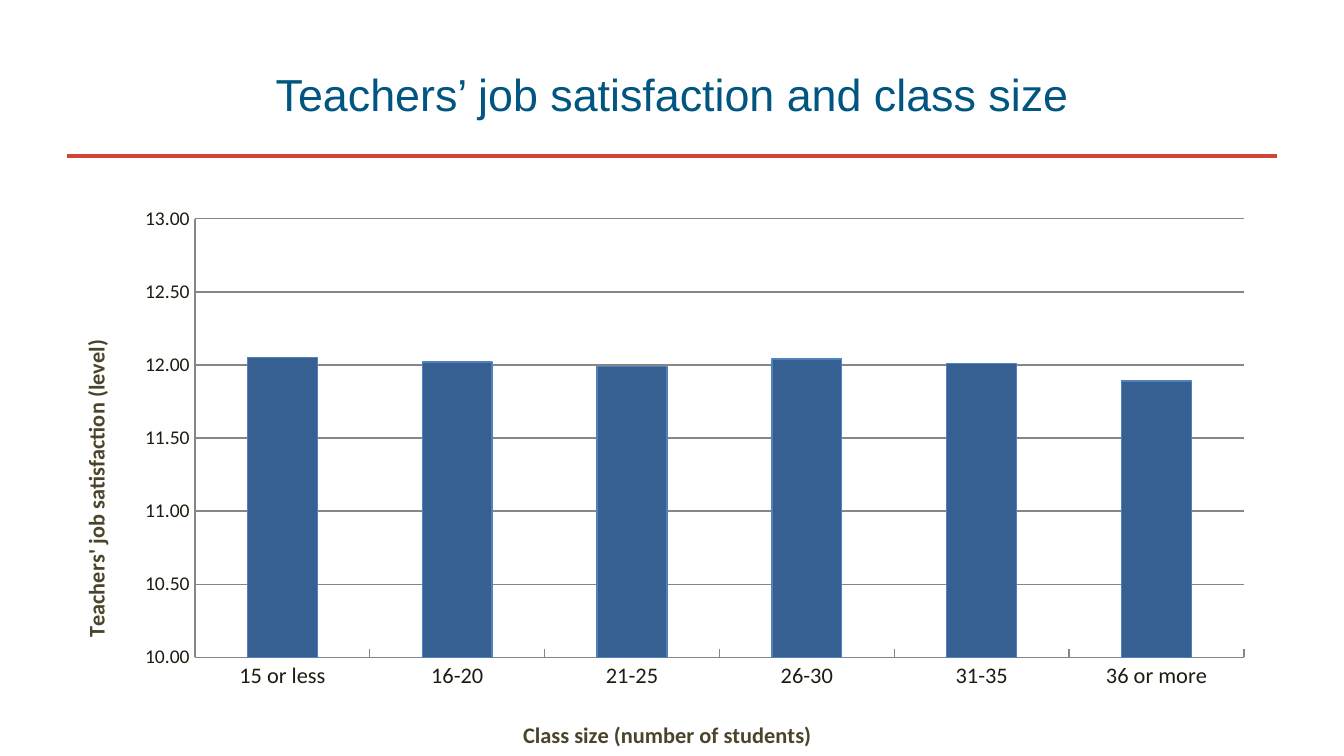
"""Build a slide charting teachers' job satisfaction against class size."""
from dataclasses import dataclass

from lxml import etree
from pptx import Presentation
from pptx.chart.data import CategoryChartData
from pptx.dml.color import RGBColor
from pptx.enum.chart import XL_CHART_TYPE, XL_TICK_MARK
from pptx.enum.shapes import MSO_CONNECTOR
from pptx.enum.text import MSO_ANCHOR, PP_ALIGN
from pptx.oxml.ns import qn
from pptx.util import Pt

COLUMN = XL_CHART_TYPE.COLUMN_CLUSTERED
TICK_INSIDE = XL_TICK_MARK.INSIDE
STRAIGHT = MSO_CONNECTOR.STRAIGHT
MIDDLE = MSO_ANCHOR.MIDDLE
CENTER = PP_ALIGN.CENTER

HEADING = "Teachers’ job satisfaction and class size"
CATEGORY_TITLE = "Class size (number of students)"
VALUE_TITLE = "Teachers' job satisfaction (level)"
SATISFACTION = [
    ("15 or less", 12.05),
    ("16-20", 12.02),
    ("21-25", 11.99),
    ("26-30", 12.04),
    ("31-35", 12.01),
    ("36 or more", 11.89),
]

EMU_PER_PX = 914400 / 134.4
SLIDE_WIDTH, SLIDE_HEIGHT = 1344, 756
MARGIN = 67
CONTENT_WIDTH = SLIDE_WIDTH - 2 * MARGIN
HEADING_TOP, HEADING_HEIGHT = 31, 126
RULE_TOP = 156
CHART_TOP = 207
CHART_HEIGHT = SLIDE_HEIGHT - CHART_TOP
PLOT = (195, 216, 1049, 442)
CATEGORY_TITLE_AT = (519, 717)
VALUE_TITLE_AT = (77, 336)


@dataclass(frozen=True)
class Theme:
    heading_font: str = "Arial"
    chart_font: str = "Calibri"
    heading: str = "005681"
    rule: str = "D04432"
    column: str = "376092"
    column_edge: str = "4F81BD"
    axis_title: str = "4A452A"
    axis_label: str = "1E1C11"
    grid: str = "868686"
    chart_text: str = "000000"
    heading_size: float = 24
    axis_title_size: float = 12
    category_size: float = 12
    value_size: float = 10.5
    chart_size: float = 10


THEME = Theme()


def px(length):
    return round(length * EMU_PER_PX)


def style_font(font, name, size, color, bold=False):
    font.name, font.size, font.bold = name, Pt(size), bold
    font.color.rgb = RGBColor.from_string(color)


def style_line(line, color, width):
    line.color.rgb = RGBColor.from_string(color)
    line.width = Pt(width)


def add_heading(slide):
    box = slide.shapes.add_textbox(
        px(MARGIN), px(HEADING_TOP), px(CONTENT_WIDTH), px(HEADING_HEIGHT))
    frame = box.text_frame
    frame.word_wrap, frame.vertical_anchor = True, MIDDLE
    para = frame.paragraphs[0]
    para.alignment = CENTER
    span = para.add_run()
    span.text = HEADING
    style_font(span.font, THEME.heading_font, THEME.heading_size, THEME.heading)


def add_rule(slide):
    rule = slide.shapes.add_connector(
        STRAIGHT, px(MARGIN), px(RULE_TOP), px(MARGIN + CONTENT_WIDTH), px(RULE_TOP))
    style_line(rule.line, THEME.rule, 2)
    etree.SubElement(rule._element.spPr, qn("a:effectLst"))


def set_layout(parent, index, left, top, width=None, height=None):
    for old in parent.findall(qn("c:layout")):
        parent.remove(old)
    layout = etree.Element(qn("c:layout"))
    manual = etree.SubElement(layout, qn("c:manualLayout"))
    settings = [("xMode", "edge"), ("yMode", "edge"),
                ("x", (left - MARGIN) / CONTENT_WIDTH),
                ("y", (top - CHART_TOP) / CHART_HEIGHT)]
    if width:
        settings = [("layoutTarget", "inner"), *settings,
                    ("w", width / CONTENT_WIDTH), ("h", height / CHART_HEIGHT)]
    for tag, value in settings:
        etree.SubElement(manual, qn(f"c:{tag}")).set("val", str(value))
    parent.insert(index, layout)


def style_axis(axis, title, position, label_size):
    span = axis.axis_title.text_frame.paragraphs[0].add_run()
    span.text = title
    style_font(span.font, THEME.chart_font, THEME.axis_title_size, THEME.axis_title, True)
    set_layout(axis.axis_title._element, 1, *position)
    style_font(axis.tick_labels.font, THEME.chart_font, label_size, THEME.axis_label)
    axis.major_tick_mark = TICK_INSIDE
    style_line(axis.format.line, THEME.grid, 0.75)


def add_satisfaction_chart(slide):
    categories, levels = zip(*SATISFACTION)
    data = CategoryChartData(number_format="0.00")
    data.categories = categories
    data.add_series("Series 1", levels)
    chart = slide.shapes.add_chart(
        COLUMN, px(MARGIN), px(CHART_TOP), px(CONTENT_WIDTH), px(CHART_HEIGHT), data).chart
    chart.has_title = chart.has_legend = False
    style_font(chart.font, THEME.chart_font, THEME.chart_size, THEME.chart_text)

    plot = chart.plots[0]
    plot.gap_width, plot.vary_by_categories = 150, False
    series = plot.series[0]
    series.format.fill.solid()
    series.format.fill.fore_color.rgb = RGBColor.from_string(THEME.column)
    style_line(series.format.line, THEME.column_edge, 0.75)

    style_axis(chart.category_axis, CATEGORY_TITLE, CATEGORY_TITLE_AT, THEME.category_size)
    levels_axis = chart.value_axis
    style_axis(levels_axis, VALUE_TITLE, VALUE_TITLE_AT, THEME.value_size)
    levels_axis.minimum_scale, levels_axis.maximum_scale = 10, 13
    levels_axis.major_unit = 0.5
    levels_axis.tick_labels.number_format = "#,##0.00"
    levels_axis.tick_labels.number_format_is_linked = False
    levels_axis.has_major_gridlines = True
    style_line(levels_axis.major_gridlines.format.line, THEME.grid, 0.75)
    set_layout(chart._chartSpace.chart.plotArea, 0, *PLOT)


def main():
    deck = Presentation()
    deck.slide_width, deck.slide_height = px(SLIDE_WIDTH), px(SLIDE_HEIGHT)
    slide = deck.slides.add_slide(deck.slide_layouts[6])
    add_rule(slide)
    add_heading(slide)
    add_satisfaction_chart(slide)
    deck.save("out.pptx")


if __name__ == "__main__":
    main()
